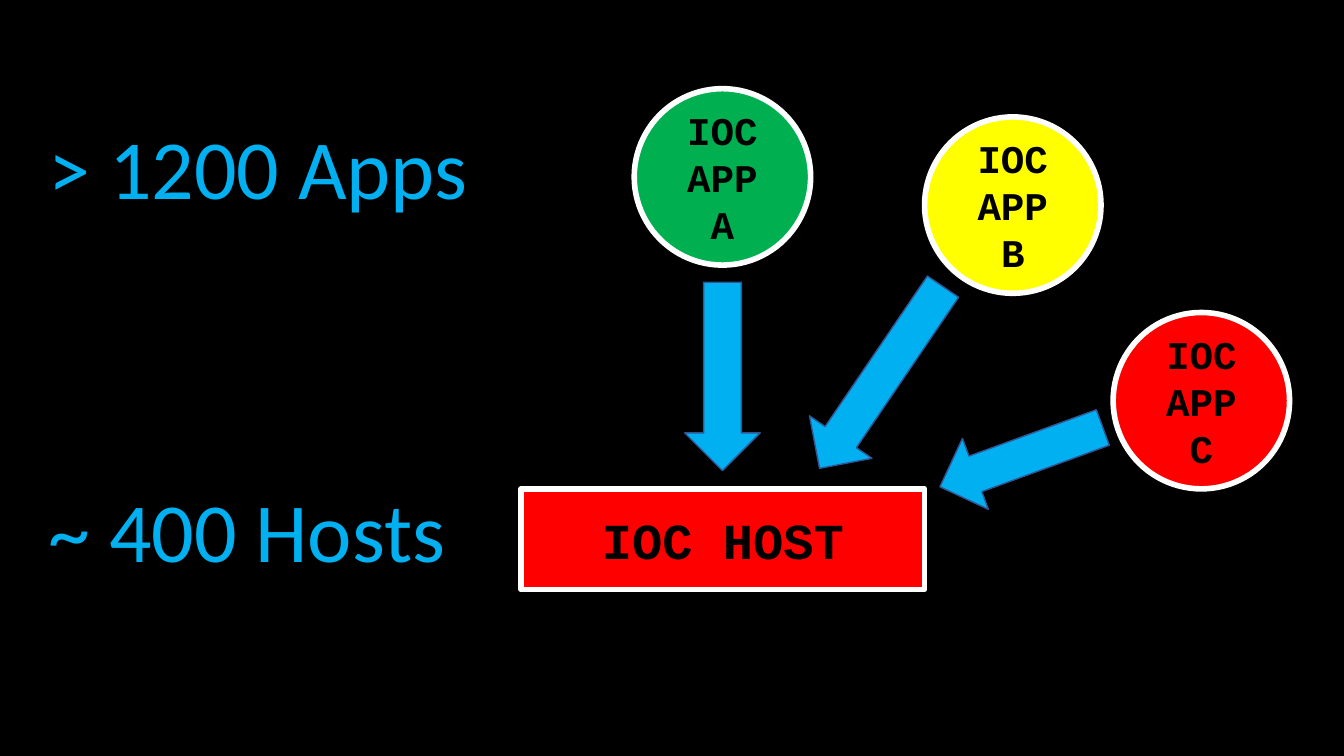
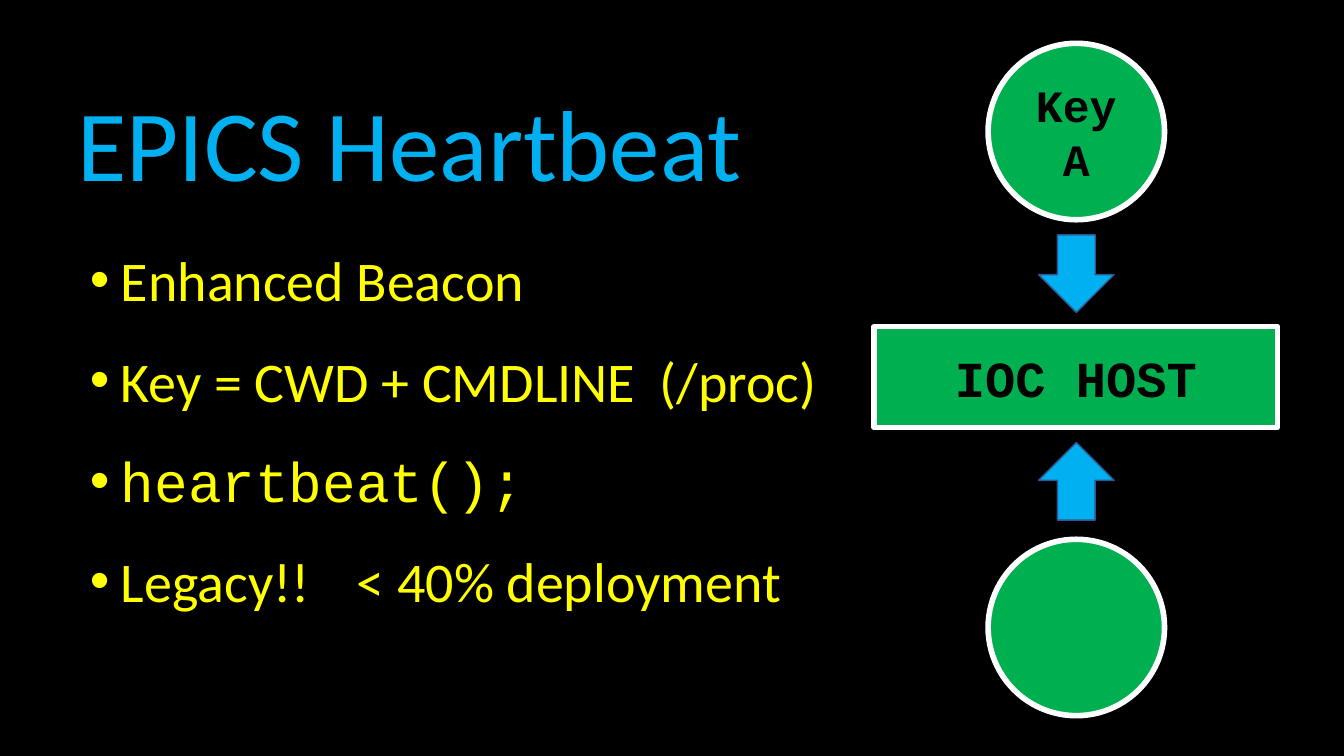
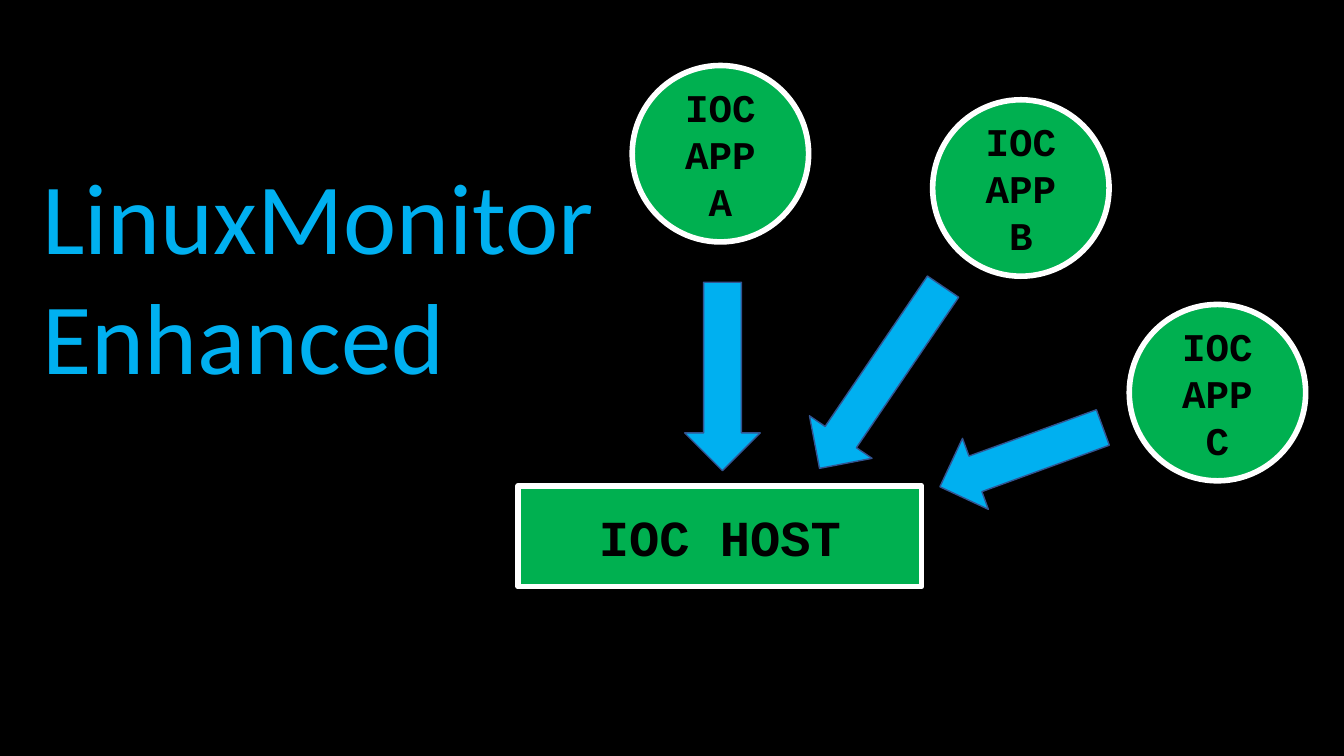
from pptx import Presentation
from pptx.dml.color import RGBColor
from pptx.enum import shapes, text
from pptx.oxml.ns import qn
from pptx.util import Inches, Pt
from lxml import etree

BLACK, WHITE, BLUE, NAVY = "000000", "FFFFFF", "00B0F0", "325491"
GREEN, YELLOW, RED = "00B050", "FFFF00", "FF0000"
SANS, MONO = "Calibri", "Courier New"
CIRCLE, HOST_WIDTH, HOST_HEIGHT, ARROW_WIDTH = 1.75, 4, 1, 0.75
TITLE_ONLY, TITLE_AND_BODY = 5, 1


def rgb(value):
    return RGBColor.from_string(value)


# Text
def write(frame, lines, size, color, font=SANS, bold=False,
          align=text.PP_ALIGN.LEFT, anchor=text.MSO_ANCHOR.TOP):
    frame.word_wrap = True
    frame.auto_size = text.MSO_AUTO_SIZE.NONE
    frame.vertical_anchor = anchor
    for index, line in enumerate(lines):
        paragraph = frame.paragraphs[0] if index == 0 else frame.add_paragraph()
        paragraph.alignment = align
        paragraph.space_before = Pt(0)
        run = paragraph.add_run()
        run.text = line
        run.font.name, run.font.size, run.font.bold = font, Pt(size), bold
        run.font.color.rgb = rgb(color)


def place(item, left, top, width, height):
    item.left, item.top = Inches(left), Inches(top)
    item.width, item.height = Inches(width), Inches(height)


def add_title(slide, lines, box, size):
    place(slide.shapes.title, *box)
    write(slide.shapes.title.text_frame, lines, size, BLUE)


def add_bullets(slide, bullets, box):
    """Each bullet is its text, its font and the tab stop it uses, if any."""
    body = slide.placeholders[1]
    place(body, *box)
    write(body.text_frame, [line for line, _, _ in bullets], 40, YELLOW)
    for index, (_, font, stop) in enumerate(bullets):
        paragraph = body.text_frame.paragraphs[index]
        properties = paragraph._p.get_or_add_pPr()
        properties.set("marL", str(Inches(0.31)))
        properties.set("indent", str(-Inches(0.31)))
        etree.SubElement(properties, qn("a:buFont"), typeface="Arial")
        etree.SubElement(properties, qn("a:buChar"), char="•")
        if stop:
            tabs = etree.SubElement(properties, qn("a:tabLst"))
            etree.SubElement(tabs, qn("a:tab"), pos=str(Inches(stop)), algn="l")
        if index:
            paragraph.space_before = Pt(23.5)
        for run in paragraph.runs:
            run.font.name = font


# Diagram parts
def add_part(slide, preset, box, fill, line, line_width):
    part = slide.shapes.add_shape(preset, *map(Inches, box))
    part.shadow.inherit = False
    part.fill.solid()
    part.fill.fore_color.rgb = rgb(fill)
    part.line.color.rgb = rgb(line)
    part.line.width = Pt(line_width)
    return part


def add_node(slide, preset, box, fill, lines, size):
    node = add_part(slide, preset, box, fill, WHITE, 4)
    write(node.text_frame, lines, size, BLACK, font=MONO, bold=True,
          align=text.PP_ALIGN.CENTER, anchor=text.MSO_ANCHOR.MIDDLE)


def add_circle(slide, left, top, fill, lines=(), size=28):
    add_node(slide, shapes.MSO_SHAPE.OVAL, (left, top, CIRCLE, CIRCLE), fill, lines, size)


def add_host(slide, left, top, fill):
    add_node(slide, shapes.MSO_SHAPE.RECTANGLE, (left, top, HOST_WIDTH, HOST_HEIGHT),
             fill, ["IOC HOST"], 36)


def add_arrow(slide, left, top, length, rotation):
    arrow = add_part(slide, shapes.MSO_SHAPE.RIGHT_ARROW,
                     (left, top, length, ARROW_WIDTH), BLUE, NAVY, 1)
    arrow.rotation = rotation


def add_app_diagram(slide, apps, host):
    """Three apps, each with an arrow to the host they run on."""
    for letter, app in zip("ABC", apps):
        add_circle(slide, *app, ["IOC", "APP", letter])
    for arrow in ((6.23, 3.36, 1.87, 90), (7.65, 3.37, 2.18, 124.2), (9.27, 4.16, 1.72, 160)):
        add_arrow(slide, *arrow)
    add_host(slide, *host)


# Slides
def build_counts(slide):
    add_title(slide, ["> 1200 Apps"], (0.38, 1.1, 5.28, 1.11), 60)
    hosts = slide.shapes.add_textbox(*map(Inches, (0.38, 4.7, 5.01, 1.11)))
    write(hosts.text_frame, ["~ 400 Hosts"], 60, BLUE)
    add_app_diagram(slide, [(6.29, 0.88, GREEN), (9.17, 1.16, YELLOW), (11.04, 3.1, RED)],
                    (5.17, 4.85, RED))


def build_heartbeat(slide):
    add_title(slide, ["EPICS Heartbeat"], (0.67, 0.75, 7.41, 1.31), 72)
    add_bullets(slide, [
        ("Enhanced Beacon", SANS, None),
        ("Key = CWD + CMDLINE\t(/proc)", SANS, 5.65),
        ("heartbeat();", MONO, None),
        ("Legacy!!\t< 40% deployment", SANS, 2.65),
    ], (0.79, 2.39, 7.8, 3.8))
    add_circle(slide, 9.8, 0.43, GREEN, ["Key", "A"], 32)
    add_arrow(slide, 10.29, 2.34, 0.77, 90)
    add_host(slide, 8.67, 3.24, GREEN)
    add_arrow(slide, 10.29, 4.4, 0.77, 270)
    add_circle(slide, 9.8, 5.35, GREEN)


def build_monitor(slide):
    add_title(slide, ["LinuxMonitor", "Enhanced"], (0.32, 1.47, 6.16, 2.52), 72)
    add_app_diagram(slide, [(6.27, 0.65, GREEN), (9.25, 0.99, GREEN), (11.2, 3.02, GREEN)],
                    (5.14, 4.82, GREEN))


def main():
    deck = Presentation()
    deck.slide_width, deck.slide_height = Inches(13.33), Inches(7.5)
    background = deck.slide_master.background.fill
    background.solid()
    background.fore_color.rgb = rgb(BLACK)
    for build, layout in ((build_counts, TITLE_ONLY), (build_heartbeat, TITLE_AND_BODY),
                          (build_monitor, TITLE_ONLY)):
        build(deck.slides.add_slide(deck.slide_layouts[layout]))
    deck.save("out.pptx")


if __name__ == "__main__":
    main()
